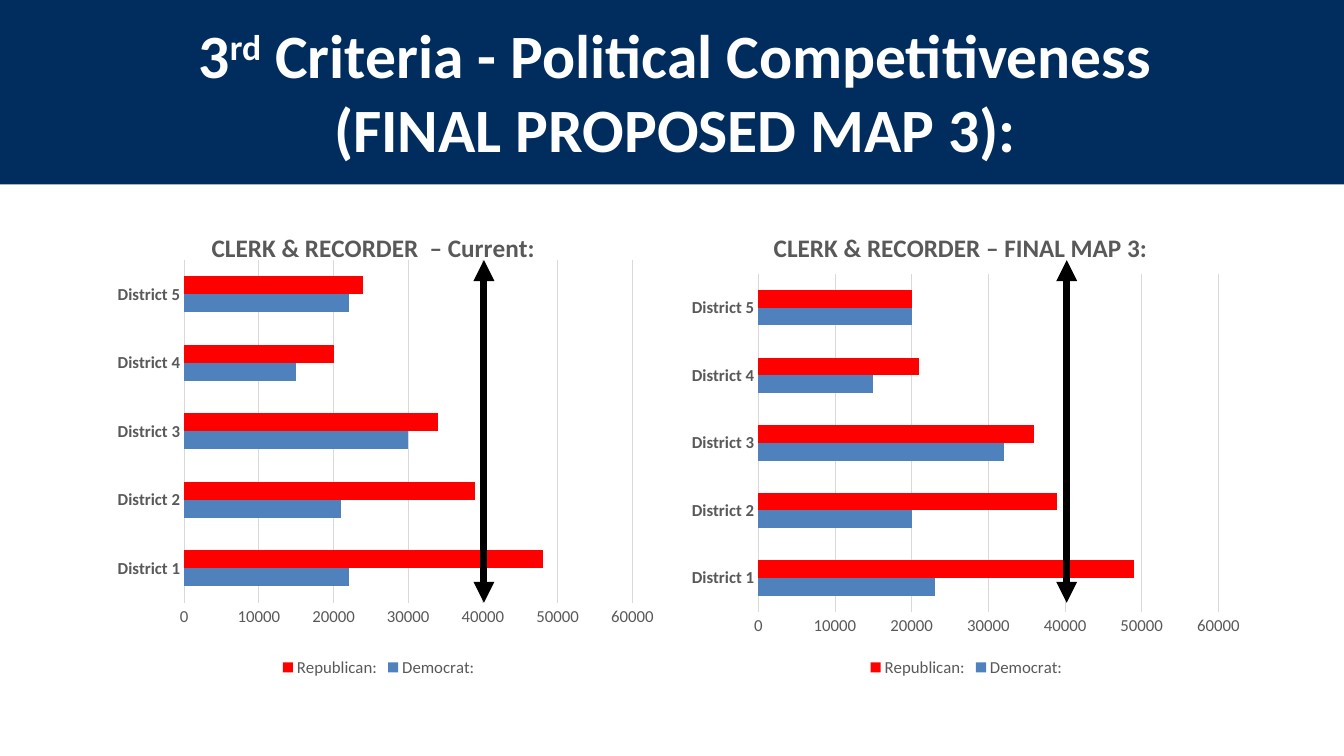
from lxml import etree
from pptx import Presentation
from pptx.chart.data import CategoryChartData
from pptx.dml.color import RGBColor
from pptx.enum.chart import XL_CHART_TYPE, XL_LEGEND_POSITION, XL_TICK_MARK
from pptx.enum.shapes import MSO_CONNECTOR, MSO_SHAPE
from pptx.enum.text import PP_ALIGN
from pptx.oxml import parse_xml
from pptx.oxml.ns import nsdecls, qn
from pptx.util import Inches, Pt

BAR_CLUSTERED = XL_CHART_TYPE.BAR_CLUSTERED
LEGEND_BOTTOM = XL_LEGEND_POSITION.BOTTOM
NO_TICK = XL_TICK_MARK.NONE
STRAIGHT = MSO_CONNECTOR.STRAIGHT
RECTANGLE = MSO_SHAPE.RECTANGLE
CENTER = PP_ALIGN.CENTER

FONT = "Calibri"
COLORS = {
    "navy": "002D5D", "white": "FFFFFF", "black": "000000", "label": "595959",
    "grid": "D9D9D9", "Democrat:": "4F81BD", "Republican:": "FF0000",
}
HEADING = [
    [("3", 0), ("rd", 30000), (" Criteria - Political Competitiveness", 0)],
    [("(FINAL PROPOSED MAP 3):", 0)],
]
DISTRICTS = [f"District {number}" for number in range(1, 6)]
CHARTS = [
    {
        "title": "CLERK & RECORDER  – Current:",
        "left": 0.92, "arrow": 4.8,
        "title_at": (0.2, 0.05), "plot": (0.16, 0.122, 0.784, 0.714),
        "series": {
            "Democrat:": (22000, 21000, 30000, 15000, 22000),
            "Republican:": (48000, 39000, 34000, 20000, 24000),
        },
    },
    {
        "title": "CLERK & RECORDER – FINAL MAP 3:",
        "left": 6.75, "arrow": 10.58,
        "title_at": (0.155, 0.05), "plot": (0.136, 0.151, 0.805, 0.704),
        "series": {
            "Democrat:": (23000, 20000, 32000, 15000, 20000),
            "Republican:": (49000, 39000, 36000, 21000, 20000),
        },
    },
]
CHART_TOP, CHART_WIDTH, CHART_HEIGHT = 2, 5.67, 4.76
ARROW_TOP, ARROW_BOTTOM = 2.58, 5.98


def color(name):
    return RGBColor.from_string(COLORS[name])


def style_font(font, size, name, bold=False):
    font.name = FONT
    font.size = Pt(size)
    font.bold = bold
    font.color.rgb = color(name)


def make_layout(values, inner=False):
    target = '<c:layoutTarget val="inner"/>' if inner else ""
    keys = "xywh"[:len(values)]
    modes = "".join(f'<c:{key}Mode val="edge"/>' for key in "xy")
    sizes = "".join(f'<c:{key} val="{value}"/>' for key, value in zip(keys, values))
    return parse_xml(
        f'<c:layout {nsdecls("c")}><c:manualLayout>{target}{modes}{sizes}'
        "</c:manualLayout></c:layout>"
    )


def set_layout(parent, layout, index):
    for existing in parent.findall(qn("c:layout")):
        parent.remove(existing)
    parent.insert(index, layout)


def add_heading(slide):
    banner = slide.shapes.add_shape(
        RECTANGLE, Inches(0), Inches(-0.03), Inches(13.33), Inches(1.86))
    banner.shadow.inherit = False
    banner.fill.solid()
    banner.fill.fore_color.rgb = color("navy")
    banner.line.fill.background()
    box = slide.shapes.add_textbox(
        Inches(0.56), Inches(0.12), Inches(11.78), Inches(2.32))
    frame = box.text_frame
    frame.word_wrap = True
    for index, runs in enumerate(HEADING):
        paragraph = frame.add_paragraph() if index else frame.paragraphs[0]
        paragraph.alignment = CENTER
        paragraph.level = 1
        properties = paragraph._p.get_or_add_pPr()
        properties.set("marL", str(Inches(0.5)))
        properties.set("indent", "0")
        for text, baseline in runs:
            run = paragraph.add_run()
            run.text = text
            style_font(run.font, 44, "white", True)
            if baseline:
                run.font._element.set("baseline", str(baseline))


def add_district_chart(slide, content):
    data = CategoryChartData()
    data.categories = DISTRICTS
    for name, values in content["series"].items():
        data.add_series(name, values)
    chart = slide.shapes.add_chart(
        BAR_CLUSTERED, Inches(content["left"]), Inches(CHART_TOP),
        Inches(CHART_WIDTH), Inches(CHART_HEIGHT), data).chart
    style_font(chart.font, 10, "black")

    chart.has_title = True
    run = chart.chart_title.text_frame.paragraphs[0].add_run()
    run.text = content["title"]
    style_font(run.font, 18, "label", True)
    chart.chart_title.include_in_layout = False
    set_layout(chart.chart_title._element, make_layout(content["title_at"]), 1)
    plot_area = chart._chartSpace.chart.plotArea
    set_layout(plot_area, make_layout(content["plot"], True), 0)

    chart.has_legend = True
    chart.legend.position = LEGEND_BOTTOM
    chart.legend.include_in_layout = False
    style_font(chart.legend.font, 12, "label")

    plot = chart.plots[0]
    plot.gap_width = 182
    plot.vary_by_categories = False
    for series in plot.series:
        series.format.fill.solid()
        series.format.fill.fore_color.rgb = color(series.name)

    categories, values = chart.category_axis, chart.value_axis
    for axis in (categories, values):
        axis.major_tick_mark = axis.minor_tick_mark = NO_TICK
        style_font(axis.tick_labels.font, 12, "label", axis is categories)
    values.minimum_scale = 0
    values.maximum_scale = 60000
    values.major_unit = 10000
    values.has_major_gridlines = True
    values.format.line.fill.background()
    for line in (categories.format.line, values.major_gridlines.format.line):
        line.color.rgb = color("grid")
        line.width = Pt(0.75)


def add_arrow(slide, center):
    arrow = slide.shapes.add_connector(
        STRAIGHT, Inches(center), Inches(ARROW_TOP),
        Inches(center), Inches(ARROW_BOTTOM))
    arrow.line.color.rgb = color("black")
    arrow.line.width = Pt(5)
    outline = arrow.line._get_or_add_ln()
    for end in ("a:headEnd", "a:tailEnd"):
        etree.SubElement(outline, qn(end), type="triangle")
    etree.SubElement(arrow._element.spPr, qn("a:effectLst"))


def main():
    presentation = Presentation()
    presentation.slide_width = Inches(13.33)
    presentation.slide_height = Inches(7.5)
    slide = presentation.slides.add_slide(presentation.slide_layouts[6])
    add_heading(slide)
    for content in CHARTS:
        add_district_chart(slide, content)
    for content in CHARTS:
        add_arrow(slide, content["arrow"])
    presentation.save("out.pptx")


if __name__ == "__main__":
    main()
